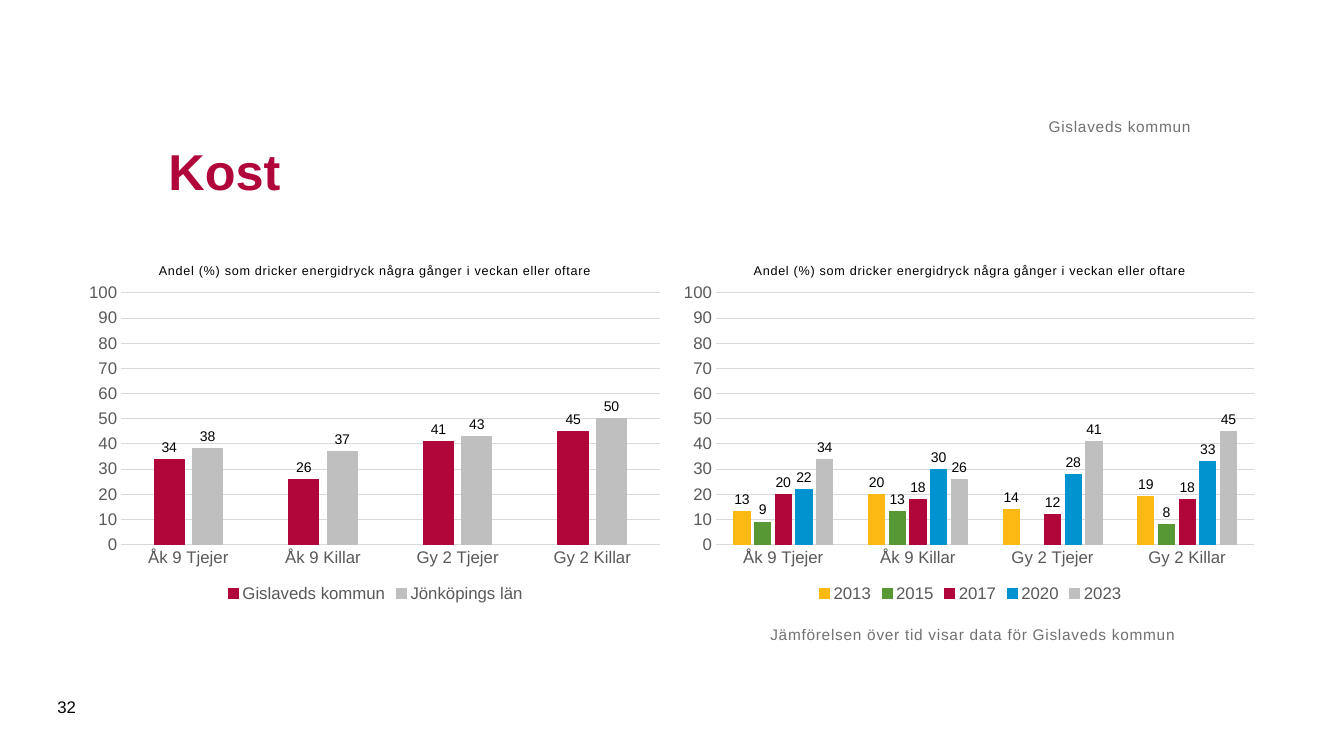
from lxml import etree
from pptx import Presentation
from pptx.chart.data import CategoryChartData
from pptx.dml.color import RGBColor
from pptx.enum.chart import XL_CHART_TYPE as CT, XL_LABEL_POSITION as LP
from pptx.enum.chart import XL_LEGEND_POSITION as LegendPos, XL_TICK_MARK as Tick
from pptx.enum.text import MSO_ANCHOR as Anchor, PP_ALIGN as Align
from pptx.oxml.ns import qn
from pptx.util import Emu, Pt

PX = 9144  # EMU per px, 100 px to the inch
FONT = "Arial"
NUM = "#,##0;#,##0"

BLACK = RGBColor(0x00, 0x00, 0x00)
AXIS_TEXT = RGBColor(0x59, 0x59, 0x59)
NOTE = RGBColor(0x71, 0x71, 0x71)
GRID = RGBColor(0xD9, 0xD9, 0xD9)
RED = RGBColor(0xB1, 0x06, 0x3A)
GRAY = RGBColor(0xBF, 0xBF, 0xBF)
YELLOW = RGBColor(0xFD, 0xB9, 0x13)
GREEN = RGBColor(0x57, 0x98, 0x35)
BLUE = RGBColor(0x00, 0x93, 0xD0)

CATEGORIES = ["Åk 9 Tjejer", "Åk 9 Killar", "Gy 2 Tjejer", "Gy 2 Killar"]
CHART_TITLE = "Andel (%) som dricker energidryck några gånger i veckan eller oftare"
BY_AREA = [
    ("Gislaveds kommun", [34, 26, 41, 45], RED),
    ("Jönköpings län", [38, 37, 43, 50], GRAY),
]
BY_YEAR = [
    ("2013", [13, 20, 14, 19], YELLOW),
    ("2015", [9, 13, None, 8], GREEN),
    ("2017", [20, 18, 12, 18], RED),
    ("2020", [22, 30, 28, 33], BLUE),
    ("2023", [34, 26, 41, 45], GRAY),
]


def px(*lengths):
    return [Emu(n * PX) for n in lengths]


def set_font(font, size, color, bold=False):
    font.name, font.size, font.bold = FONT, Pt(size), bold
    font.color.rgb = color


def write(tf, text, size=11, color=NOTE, bold=False, spacing=0,
          align=Align.LEFT, anchor=Anchor.TOP, inset=None):
    """Put one formatted line in a text frame; spacing is in 1/100 pt."""
    tf.word_wrap = True
    tf.vertical_anchor = anchor
    if inset is not None:
        tf.margin_left = tf.margin_top = tf.margin_right = tf.margin_bottom = inset
    p = tf.paragraphs[0]
    p.alignment = align
    r = p.add_run()
    r.text = text
    set_font(r.font, size, color, bold)
    if spacing:
        r.font._element.set("spc", str(spacing))


def add_text(s, box, text, **fmt):
    write(s.shapes.add_textbox(*px(*box)).text_frame, text, **fmt)


def set_layout(parent, index, target=None, **fractions):
    """Place a chart part by fractions of the chart's size."""
    for old in parent.findall(qn("c:layout")):
        parent.remove(old)
    layout = etree.Element(qn("c:layout"))
    manual = etree.SubElement(layout, qn("c:manualLayout"))
    if target:
        etree.SubElement(manual, qn("c:layoutTarget")).set("val", target)
    for mode in ("xMode", "yMode"):
        etree.SubElement(manual, qn("c:" + mode)).set("val", "edge")
    for name, value in fractions.items():
        etree.SubElement(manual, qn("c:" + name)).set("val", str(value))
    parent.insert(index, layout)


def format_axes(chart):
    cat, val = chart.category_axis, chart.value_axis
    for axis in (cat, val):
        axis.major_tick_mark = axis.minor_tick_mark = Tick.NONE
        set_font(axis.tick_labels.font, 12, AXIS_TEXT)
    cat.format.line.color.rgb = GRID
    cat.format.line.width = Pt(0.75)
    val.format.line.fill.background()
    val.minimum_scale, val.maximum_scale, val.major_unit = 0, 100, 10
    val.tick_labels.number_format = NUM
    val.tick_labels.number_format_is_linked = False
    val.has_major_gridlines = True
    val.major_gridlines.format.line.color.rgb = GRID
    val.major_gridlines.format.line.width = Pt(0.75)


def format_series(series, color):
    series.format.fill.solid()
    series.format.fill.fore_color.rgb = color
    series.format.line.color.rgb = color
    series.format.line.width = Pt(0.75)
    labels = series.data_labels
    labels.show_value = True
    labels.position = LP.OUTSIDE_END
    labels.number_format = NUM
    labels.number_format_is_linked = False
    set_font(labels.font, 10, BLACK)


def add_column_chart(s, box, rows):
    data = CategoryChartData(number_format="0")
    data.categories = CATEGORIES
    for name, values, _ in rows:
        data.add_series(name, values)
    chart = s.shapes.add_chart(CT.COLUMN_CLUSTERED, *px(*box), data).chart
    set_font(chart.font, 10, BLACK)

    chart.has_title = True
    title = chart.chart_title
    write(title.text_frame, CHART_TITLE, size=9, color=BLACK, spacing=50,
          align=Align.CENTER)
    title.include_in_layout = False
    set_layout(title._element, 1, x=0.13, y=0.05)

    chart.has_legend = True
    chart.legend.position = LegendPos.BOTTOM
    chart.legend.include_in_layout = False
    set_font(chart.legend.font, 12, AXIS_TEXT)

    format_axes(chart)
    plot = chart.plots[0]
    plot.vary_by_categories = False
    plot.gap_width, plot.overlap = 219, -27
    for series, (_, _, color) in zip(plot.series, rows):
        format_series(series, color)
    set_layout(plot._element.getparent(), 0, "inner", x=0.07, y=0.14, w=0.91, h=0.69)


def add_heading(s, box):
    title = s.shapes.title
    title.left, title.top, title.width, title.height = px(*box)
    write(title.text_frame, "Kost", size=36, color=RED, bold=True,
          anchor=Anchor.MIDDLE)


def build_diet_slide(prs):
    s = prs.slides.add_slide(prs.slide_layouts[5])
    for i, rows in enumerate((BY_AREA, BY_YEAR)):
        add_column_chart(s, (79 + 590 * i, 240, 587, 362), rows)
    add_heading(s, (157, 98, 1024, 142))
    add_text(s, (764, 620, 531, 94), "Jämförelsen över tid visar data för Gislaveds kommun",
             spacing=50, inset=0)
    add_text(s, (157, 62, 1024, 73), "Gislaveds kommun", spacing=50,
             align=Align.RIGHT, anchor=Anchor.BOTTOM, inset=0)
    add_text(s, (47, 681, 57, 40), "32", size=12, color=BLACK, anchor=Anchor.MIDDLE)


def main():
    prs = Presentation()
    prs.slide_width, prs.slide_height = px(1333, 750)
    build_diet_slide(prs)
    prs.save("out.pptx")


if __name__ == "__main__":
    main()
